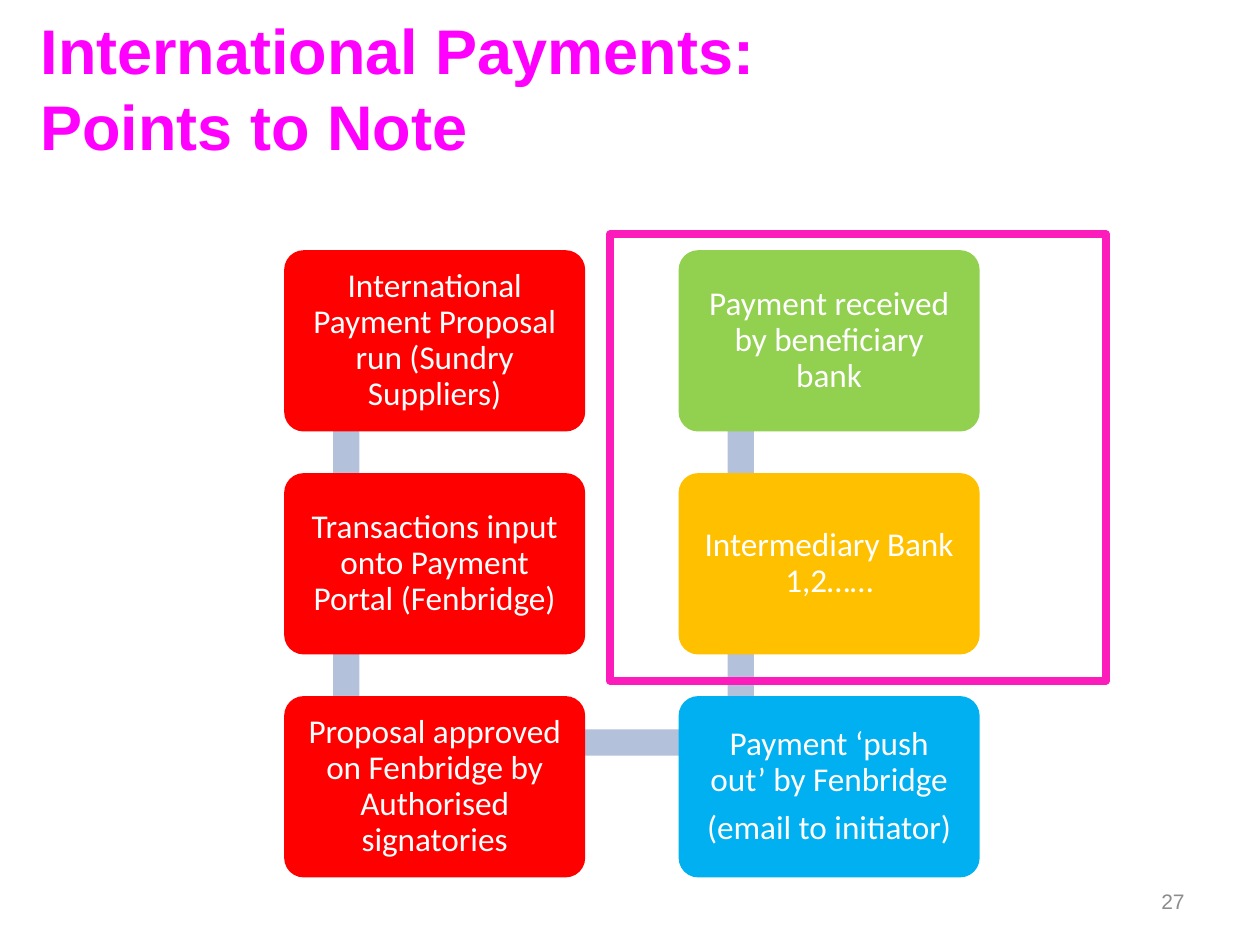
from pptx import Presentation
from pptx.dml.color import RGBColor
from pptx.enum.shapes import MSO_SHAPE
from pptx.enum.text import MSO_ANCHOR, MSO_AUTO_SIZE, PP_ALIGN
from pptx.util import Pt

RECTANGLE = MSO_SHAPE.RECTANGLE
ROUNDED = MSO_SHAPE.ROUNDED_RECTANGLE
MIDDLE, BOTTOM = MSO_ANCHOR.MIDDLE, MSO_ANCHOR.BOTTOM
NO_FIT = MSO_AUTO_SIZE.NONE
LEFT, CENTER, RIGHT = PP_ALIGN.LEFT, PP_ALIGN.CENTER, PP_ALIGN.RIGHT

MAGENTA = RGBColor(0xFF, 0x00, 0xFF)
PINK = RGBColor(0xFC, 0x1C, 0xBC)
RED = RGBColor(0xFF, 0x00, 0x00)
BLUE = RGBColor(0x00, 0xB0, 0xF0)
AMBER = RGBColor(0xFF, 0xC0, 0x00)
GREEN = RGBColor(0x92, 0xD0, 0x50)
PALE_BLUE = RGBColor(0xB3, 0xC1, 0xDB)
GREY = RGBColor(0x8C, 0x8C, 0x8C)
WHITE = RGBColor(0xFF, 0xFF, 0xFF)

TITLE_FONT = {"name": "Arial", "size": Pt(36), "bold": True}
STEP_FONT = {"name": "Calibri", "size": Pt(19)}
NUMBER_FONT = {"name": "Arial", "size": Pt(12)}
STEP_PARAGRAPH = {"alignment": CENTER, "line_spacing": 0.9, "space_after": Pt(6.65)}
STEP_FRAME = {"word_wrap": True, "vertical_anchor": MIDDLE, "margin_left": Pt(8.7),
              "margin_right": Pt(8.7), "margin_top": Pt(8.7), "margin_bottom": Pt(8.7)}

COLUMNS = (163.4, 388.8)
TOP, ROW_PITCH = 144, 127.4
STEP_WIDTH, STEP_HEIGHT = 170, 101.6
BAR, BAR_INSET, BAR_DROP = 15, 27, 25.5

STEPS = [
    (0, 0, RED, ["International Payment Proposal run (Sundry Suppliers)"]),
    (0, 1, RED, ["Transactions input onto Payment Portal (Fenbridge)"]),
    (0, 2, RED, ["Proposal approved on Fenbridge by Authorised signatories"]),
    (1, 2, BLUE, ["Payment ‘push out’ by Fenbridge", "(email to initiator)"]),
    (1, 1, AMBER, ["Intermediary Bank 1,2……"]),
    (1, 0, GREEN, ["Payment received by beneficiary bank"]),
]


def apply(target, values):
    for name, value in values.items():
        setattr(target, name, value)


def write(frame, lines, font, color, paragraph):
    for index, line in enumerate(lines):
        para = frame.add_paragraph() if index else frame.paragraphs[0]
        para.text = line
        apply(para, paragraph)
        apply(para.font, font)
        para.font.color.rgb = color


def add_title(page):
    title = page.shapes.title
    apply(title, {"left": Pt(16), "top": Pt(13.7), "width": Pt(584), "height": Pt(83)})
    apply(title.text_frame, {"word_wrap": True, "vertical_anchor": BOTTOM,
                             "auto_size": NO_FIT})
    write(title.text_frame, ["International Payments: \vPoints to Note"],
          TITLE_FONT, MAGENTA, {"alignment": LEFT})


def add_box(page, kind, bounds, fill=None, line=None, line_width=0):
    box = page.shapes.add_shape(kind, *map(Pt, bounds))
    box.shadow.inherit = False
    if fill is None:
        box.fill.background()
    else:
        box.fill.solid()
        box.fill.fore_color.rgb = fill
    if line is None:
        box.line.fill.background()
    else:
        box.line.color.rgb = line
        box.line.width = Pt(line_width)
    return box


def add_links(page):
    for left in COLUMNS:
        for row in range(2):
            top = TOP + row * ROW_PITCH + BAR_DROP
            add_box(page, RECTANGLE, (left + BAR_INSET, top, BAR, ROW_PITCH), PALE_BLUE)
    top = TOP + 2 * ROW_PITCH + BAR_DROP - BAR / 2
    length = COLUMNS[1] - COLUMNS[0]
    add_box(page, RECTANGLE, (COLUMNS[0] + BAR_INSET + BAR / 2, top, length, BAR), PALE_BLUE)


def add_step(page, column, row, color, lines):
    bounds = (COLUMNS[column], TOP + row * ROW_PITCH, STEP_WIDTH, STEP_HEIGHT)
    step = add_box(page, ROUNDED, bounds, color, color, 2)
    step.adjustments[0] = 0.1
    apply(step.text_frame, STEP_FRAME)
    write(step.text_frame, lines, STEP_FONT, WHITE, STEP_PARAGRAPH)


def add_page_number(page):
    box = page.shapes.add_textbox(Pt(516), Pt(500.5), Pt(168), Pt(28.8))
    apply(box.text_frame, {"word_wrap": True, "vertical_anchor": MIDDLE})
    write(box.text_frame, ["27"], NUMBER_FONT, GREY, {"alignment": RIGHT})


def main():
    deck = Presentation()
    apply(deck, {"slide_width": Pt(720), "slide_height": Pt(540)})
    page = deck.slides.add_slide(deck.slide_layouts[5])
    add_title(page)
    add_links(page)
    for step in STEPS:
        add_step(page, *step)
    add_page_number(page)
    add_box(page, RECTANGLE, (348.5, 134, 283.5, 255), line=PINK, line_width=4.5)
    deck.save("out.pptx")


if __name__ == "__main__":
    main()
